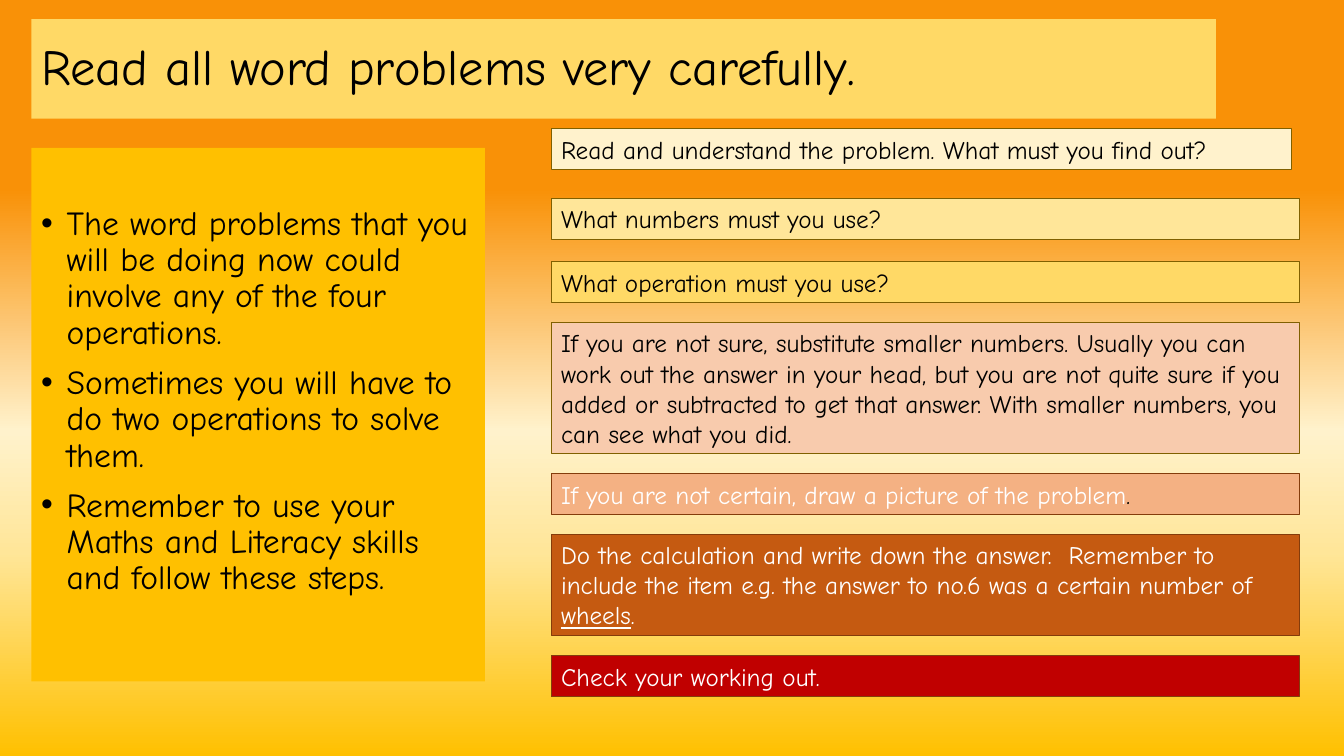
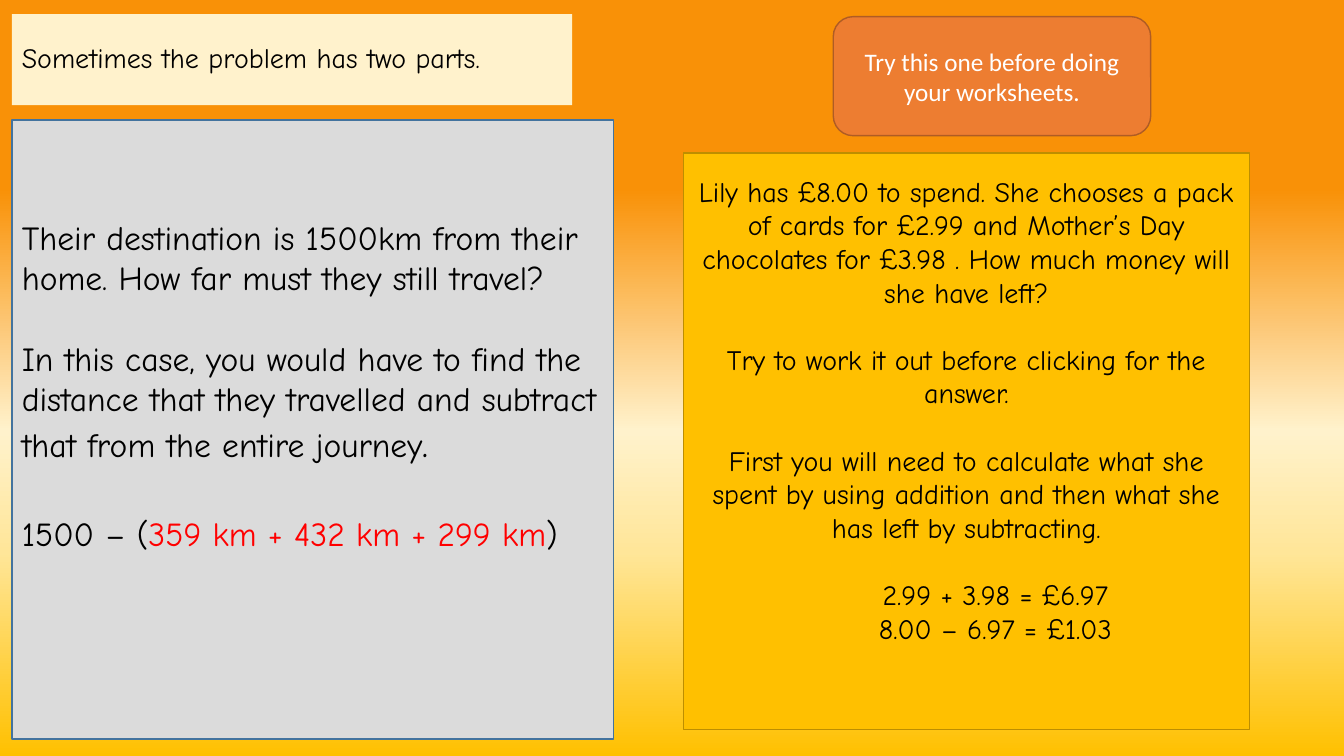
from lxml.etree import SubElement
from pptx import Presentation
from pptx.dml.color import RGBColor
from pptx.enum.shapes import MSO_SHAPE
from pptx.enum.text import MSO_ANCHOR, PP_ALIGN
from pptx.oxml.ns import qn
from pptx.util import Cm, Pt

BLACK = RGBColor(0x00, 0x00, 0x00)
WHITE = RGBColor(0xFF, 0xFF, 0xFF)
RED = RGBColor(0xFF, 0x00, 0x00)
DARK_RED = RGBColor(0xC0, 0x00, 0x00)
DEEP_ORANGE = RGBColor(0xF9, 0x91, 0x07)
CREAM = RGBColor(0xFF, 0xF2, 0xCC)
PALE_GOLD = RGBColor(0xFF, 0xE6, 0x99)
SOFT_GOLD = RGBColor(0xFF, 0xD9, 0x66)
GOLD = RGBColor(0xFF, 0xC0, 0x00)
PEACH = RGBColor(0xF8, 0xCB, 0xAD)
APRICOT = RGBColor(0xF4, 0xB1, 0x83)
ORANGE = RGBColor(0xED, 0x7D, 0x31)
RUST = RGBColor(0xC5, 0x5A, 0x11)
GREY = RGBColor(0xDB, 0xDB, 0xDB)
OLIVE_LINE = RGBColor(0x80, 0x60, 0x00)
BROWN_LINE = RGBColor(0x84, 0x3C, 0x0B)
BLUE_LINE = RGBColor(0x43, 0x73, 0x9E)
RUST_LINE = RGBColor(0xAF, 0x5C, 0x24)
GOLD_LINE = RGBColor(0xBD, 0x8E, 0x00)

FONT = "Comic Neue"
BACKGROUND_STOPS = [(25, DEEP_ORANGE), (57, CREAM), (73, PALE_GOLD), (100, GOLD)]


def add_box(page, bounds, fill, line=None, line_width=1, anchor=MSO_ANCHOR.TOP,
            inset=0.13, kind=MSO_SHAPE.RECTANGLE):
    box = page.shapes.add_shape(kind, *[Cm(length) for length in bounds])
    box.shadow.inherit = False
    box.fill.solid()
    box.fill.fore_color.rgb = fill
    if line is None:
        box.line.fill.background()
    else:
        box.line.color.rgb = line
        box.line.width = Pt(line_width)
    frame = box.text_frame
    frame.word_wrap = True
    frame.vertical_anchor = anchor
    frame.margin_top = Cm(inset)
    return frame


def add_paragraph(frame, runs, size, align=PP_ALIGN.LEFT, before=0, spacing=1.0, font=FONT):
    para = frame.paragraphs[0]
    if para.runs:
        para = frame.add_paragraph()
    para.alignment = align
    para.space_before = Pt(before)
    para.line_spacing = spacing
    for text, color, *changes in runs:
        span = para.add_run()
        span.text = text
        span.font.name = font
        span.font.size = Pt(size)
        span.font.color.rgb = color
        for change in changes:
            for name, value in change.items():
                setattr(span.font, name, value)
    return para


deck = Presentation()
deck.slide_width = Cm(33.87)
deck.slide_height = Cm(19.05)

TITLES = [
    ("Read all word problems very carefully.", 36, (0.79, 0.48, 29.85, 2.51), SOFT_GOLD),
    ("Sometimes the problem has two parts.", 20, (0.3, 0.36, 14.12, 2.29), CREAM),
]
pages = []
for text, size, bounds, fill in TITLES:
    page = deck.slides.add_slide(deck.slide_layouts[6])
    background = page.background.fill
    background.gradient()
    background.gradient_angle = 270
    stop_list = next(page._element.iter(qn("a:gsLst")))
    for stop in list(stop_list):
        stop_list.remove(stop)
    for percent, color in BACKGROUND_STOPS:
        stop = SubElement(stop_list, qn("a:gs"), pos=str(percent * 1000))
        SubElement(stop, qn("a:srgbClr"), val=str(color))
    title = add_box(page, bounds, fill, anchor=MSO_ANCHOR.MIDDLE)
    add_paragraph(title, [(text, BLACK)], size, spacing=0.9)
    pages.append(page)
steps_page, example_page = pages

ADVICE = [
    "The word problems that you will be doing now could involve any of the four operations.",
    "Sometimes you will have to do two operations to solve them.",
    "Remember to use your Maths and Literacy skills and follow these steps.",
]
advice_box = add_box(steps_page, (0.79, 3.73, 11.43, 13.44), GOLD, inset=1.47)
for index, text in enumerate(ADVICE):
    para = add_paragraph(advice_box, [(text, BLACK)], 24, before=10 if index else 0, spacing=0.9)
    properties = para._p.get_or_add_pPr()
    properties.set("marL", str(Cm(0.64)))
    properties.set("indent", str(-Cm(0.64)))
    SubElement(properties, qn("a:buFont"), typeface="Arial")
    SubElement(properties, qn("a:buChar"), char="•")

STEPS = [
    (3.25, 18.67, 1, CREAM, OLIVE_LINE,
     [("Read and understand the problem. What must you find out?", BLACK)]),
    (5.0, 18.85, 1, PALE_GOLD, OLIVE_LINE, [("What numbers must you use?", BLACK)]),
    (6.6, 18.85, 1, SOFT_GOLD, OLIVE_LINE, [("What operation must you use?", BLACK)]),
    (8.13, 18.85, 4, PEACH, OLIVE_LINE,
     [("If you are not sure, substitute smaller numbers. Usually you can work out the answer "
       "in your head, but you are not quite sure if you added or subtracted to get that answer. "
       "With smaller numbers, you can see what you did.", BLACK)]),
    (11.94, 18.85, 1, APRICOT, BROWN_LINE,
     [("If you are not certain, draw a picture of the problem", WHITE), (".", BLACK)]),
    (13.46, 18.85, 3, RUST, BROWN_LINE,
     [("Do the calculation and write down the answer.  Remember to include the item e.g. "
       "the answer to no.6 was a certain number of ", WHITE),
      ("wheels", WHITE, {"underline": True}), (".", WHITE)]),
    (16.53, 18.85, 1, DARK_RED, BROWN_LINE, [("Check your working out.", WHITE)]),
]
for top, width, lines, fill, line, runs in STEPS:
    height = 1.03 + 0.76 * (lines - 1)
    step_box = add_box(steps_page, (13.89, top, width, height), fill, line, 0.75)
    add_paragraph(step_box, runs, 18)

JOURNEY = [
    (0, [("Their destination is 1500km from their home. How far must they still travel?", BLACK)]),
    (29, [("In this case, you would have to find the distance that they travelled and subtract "
           "that from the entire journey", BLACK), (".", BLACK, {"size": Pt(28)})]),
    (34, [("1500 – (", BLACK), ("359 km + 432 km + 299 km", RED), (")", BLACK)]),
]
journey_box = add_box(example_page, (0.3, 3.02, 15.16, 15.6), GREY, BLUE_LINE, inset=2.44)
for before, runs in JOURNEY:
    add_paragraph(journey_box, runs, 24, before=before)

prompt_box = add_box(example_page, (21.0, 0.42, 8.0, 3.0), ORANGE, RUST_LINE,
                     anchor=MSO_ANCHOR.MIDDLE, kind=MSO_SHAPE.ROUNDED_RECTANGLE)
add_paragraph(prompt_box, [("Try this one before doing your worksheets.", WHITE)], 18,
              PP_ALIGN.CENTER, font="Calibri")

SHOPPING = [
    (0, 0, "Lily has £8.00 to spend. She chooses a pack of cards for £2.99 and Mother’s Day "
           "chocolates for £3.98 . How much money will she have left?"),
    (24, 0, "Try to work it out before clicking for the answer."),
    (24, 0, "First you will need to calculate what she spent by using addition and then what "
            "she has left by subtracting."),
    (24, 1.46, "2.99 + 3.98 = £6.97"),
    (0, 1.46, "8.00 – 6.97 = £1.03"),
]
shopping_box = add_box(example_page, (17.22, 3.86, 14.27, 14.53), GOLD, GOLD_LINE, inset=0.53)
for before, indent, text in SHOPPING:
    para = add_paragraph(shopping_box, [(text, BLACK)], 20, PP_ALIGN.CENTER, before)
    para._p.get_or_add_pPr().set("marL", str(Cm(indent)))

deck.save("out.pptx")
